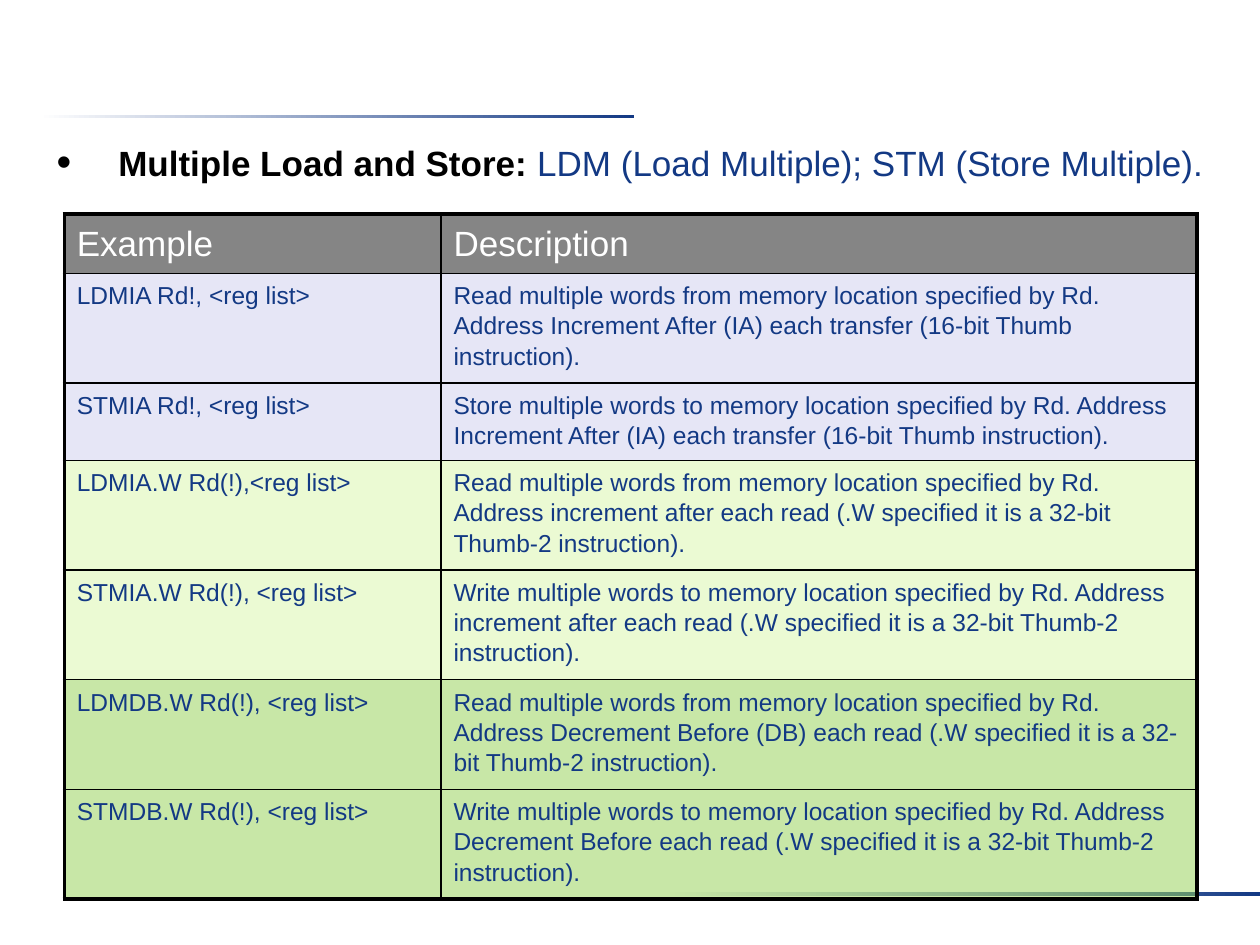
from lxml import etree
from pptx import Presentation
from pptx import util as u
from pptx.dml.color import RGBColor
from pptx.enum import shapes, text
from pptx.oxml import ns

WHITE = RGBColor(0xFF, 0xFF, 0xFF)
BLACK = RGBColor(0x00, 0x00, 0x00)
NAVY = RGBColor(0x13, 0x39, 0x84)
CHARCOAL = RGBColor(0x0D, 0x0D, 0x0D)
LAVENDER = RGBColor(0xCE, 0xCE, 0xEF)
LIME = RGBColor(0xD8, 0xF6, 0xA8)
GREEN = RGBColor(0x92, 0xD0, 0x50)

GRID_COLUMNS, GRID_ROWS = 100, 75
THIN, THICK = 1, 2.25

READ = "Read multiple words from memory location specified by Rd. Address "
STORE = "Store multiple words to memory location specified by Rd. Address "
WRITE = "Write multiple words to memory location specified by Rd. Address "
THUMB = "each transfer (16-bit Thumb instruction)."
THUMB_2 = "each read (.W specified it is a 32-bit Thumb-2 instruction)."

INSTRUCTIONS = [
    ("LDMIA Rd!, <reg list>", READ + "Increment After (IA) " + THUMB, LAVENDER, 8.2),
    ("STMIA Rd!, <reg list>", STORE + "Increment After (IA) " + THUMB, LAVENDER, 6.1),
    ("LDMIA.W Rd(!),<reg list>", READ + "increment after " + THUMB_2, LIME, 8.2),
    ("STMIA.W Rd(!), <reg list>", WRITE + "increment after " + THUMB_2, LIME, 8.2),
    ("LDMDB.W Rd(!), <reg list>", READ + "Decrement Before (DB) " + THUMB_2, GREEN, 8.2),
    ("STMDB.W Rd(!), <reg list>", WRITE + "Decrement Before " + THUMB_2, GREEN, 8.2),
]


def element(parent, tag, **attributes):
    return etree.SubElement(parent, ns.qn(tag), attributes)


def add_span(para, words, size=14, color=NAVY, bold=False, font="Arial"):
    span = para.add_run()
    span.text = words
    span.font.name = font
    span.font.size = u.Pt(size)
    span.font.bold = bold
    span.font.color.rgb = color


class SlideBuilder:
    line_spacing = 1.1
    opacity = 50

    def __init__(self, deck):
        self.deck = deck
        self.page = deck.slides.add_slide(deck.slide_layouts[6])

    def across(self, columns):
        return round(self.deck.slide_width * columns / GRID_COLUMNS)

    def down(self, rows):
        return round(self.deck.slide_height * rows / GRID_ROWS)

    def area(self, left, top, width, height):
        return self.across(left), self.down(top), self.across(width), self.down(height)

    def rule(self, left, top):
        bar = self.page.shapes.add_shape(
            shapes.MSO_SHAPE.RECTANGLE, *self.area(left, top, 47.2, 0.3))
        bar.shadow.inherit = False
        bar.line.fill.background()
        bar.fill.gradient()
        bar.fill.gradient_angle = 0
        for stop, color in zip(bar.fill.gradient_stops, (WHITE, NAVY)):
            stop.color.rgb = color

    def bullet(self, left, top, width, height, lead, rest):
        box = self.page.shapes.add_textbox(*self.area(left, top, width, height))
        frame = box.text_frame
        frame.word_wrap = True
        frame.margin_top = self.down(1)
        para = frame.paragraphs[0]
        para.line_spacing = self.line_spacing
        indent = self.across(4.9)
        settings = para._p.get_or_add_pPr()
        settings.set("marL", str(indent))
        settings.set("indent", str(-indent))
        element(settings, "a:buSzPct", val="120000")
        element(settings, "a:buFont", typeface="Arial")
        element(settings, "a:buChar", char="•")
        add_span(para, lead, size=20, color=BLACK, bold=True)
        add_span(para, rest, size=20)

    def border(self, cell, side, width):
        line = element(cell._tc.get_or_add_tcPr(), f"a:ln{side}", w=str(u.Pt(width)))
        fill = element(line, "a:solidFill")
        element(fill, "a:srgbClr", val=str(BLACK))

    def cell(self, cell, words, fill, thick_sides, **style):
        for side in "LRTB":
            self.border(cell, side, THICK if side in thick_sides else THIN)
        cell.fill.solid()
        cell.fill.fore_color.rgb = fill
        color = cell._tc.tcPr.find(ns.qn("a:solidFill")).find(ns.qn("a:srgbClr"))
        element(color, "a:alpha", val=str(self.opacity * 1000))
        para = cell.text_frame.paragraphs[0]
        para.line_spacing = self.line_spacing
        add_span(para, words, **style)

    def table(self, left, top, widths, headings, instructions):
        records = [(*headings, CHARCOAL, 4.7), *instructions]
        heights = [record[-1] for record in records]
        table = self.page.shapes.add_table(
            len(records), len(widths),
            *self.area(left, top, sum(widths), sum(heights))).table
        table.first_row = table.horz_banding = False
        for column, width in zip(table.columns, widths):
            column.width = self.across(width)
        for number, (example, description, fill, height) in enumerate(records):
            table.rows[number].height = self.down(height)
            edge = "T" if number == 0 else "B" if number == len(records) - 1 else ""
            style = {"size": 20, "color": WHITE} if number == 0 else {}
            self.cell(table.cell(number, 0), example, fill, "L" + edge, **style)
            self.cell(table.cell(number, 1), description, fill, "R" + edge, **style)


def main():
    deck = Presentation()
    deck.slide_width, deck.slide_height = u.Inches(10), u.Inches(7.5)
    builder = SlideBuilder(deck)
    builder.rule(3.1, 9.1)
    builder.rule(52.8, 70.8)
    builder.bullet(3.5, 9.9, 94.2, 9.4, "Multiple Load and Store: ",
                   "LDM (Load Multiple); STM (Store Multiple).")
    builder.table(5.1, 17, (29.9, 60), ("Example", "Description"), INSTRUCTIONS)
    deck.save("out.pptx")


if __name__ == "__main__":
    main()
